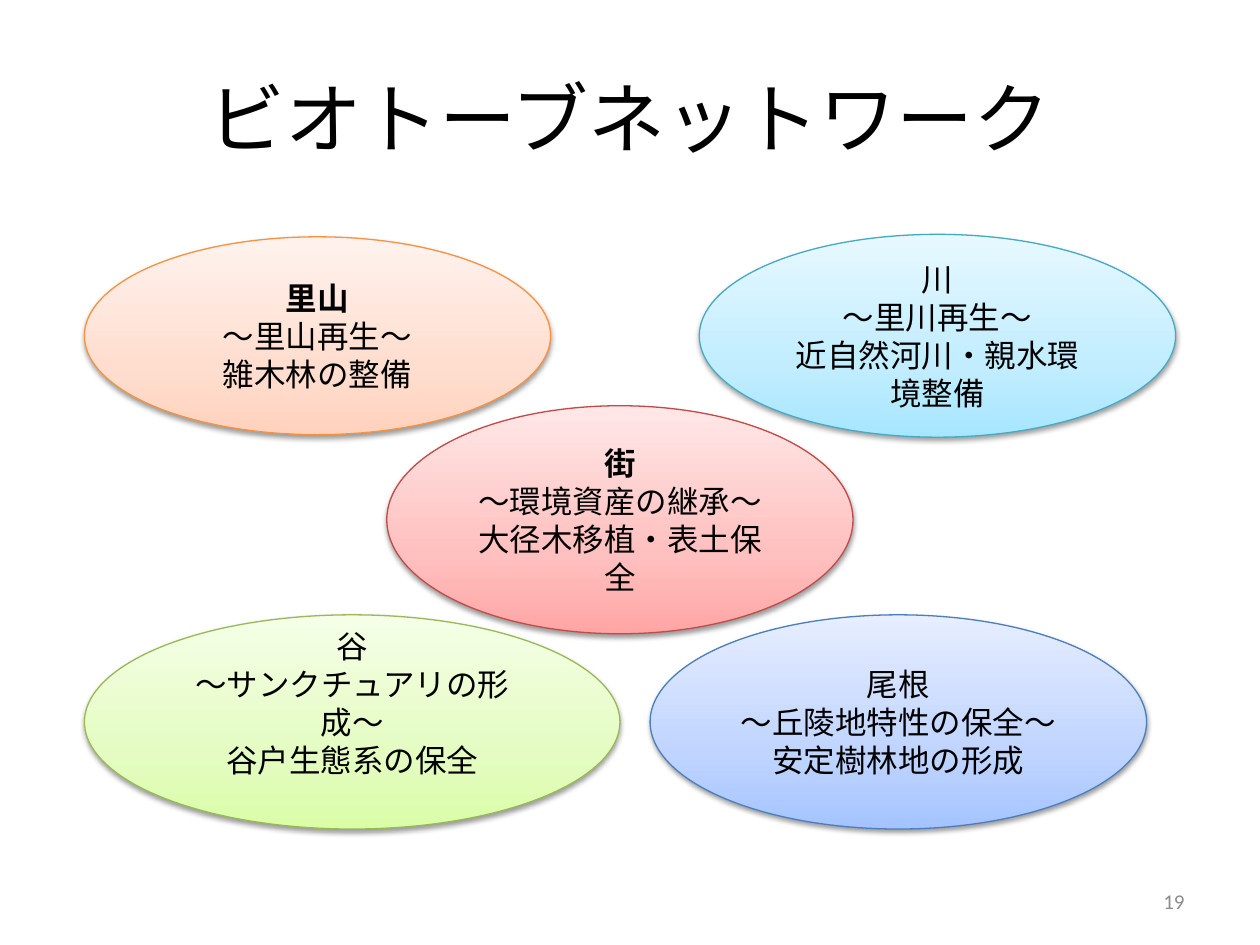
"""Build the biotope network slide with its five habitat ellipses."""
from lxml.etree import SubElement
from pptx import Presentation
from pptx.dml.color import RGBColor
from pptx.enum.shapes import MSO_SHAPE
from pptx.enum.text import MSO_ANCHOR, PP_ALIGN
from pptx.oxml.ns import qn
from pptx.util import Inches, Pt

BLACK = RGBColor(0x00, 0x00, 0x00)
GRAY = RGBColor(0x8C, 0x8C, 0x8C)
ORANGE = RGBColor(0xF6, 0x92, 0x40)
TEAL = RGBColor(0x46, 0xAA, 0xC5)
GREEN = RGBColor(0x98, 0xB9, 0x55)
BLUE = RGBColor(0x4B, 0x7E, 0xBC)
RED = RGBColor(0xBF, 0x4C, 0x48)
ORANGE_FADE = RGBColor(0xFF, 0xD2, 0xBD), RGBColor(0xFF, 0xDE, 0xD0), RGBColor(0xFF, 0xF2, 0xED)
TEAL_FADE = RGBColor(0xA7, 0xE6, 0xFF), RGBColor(0xC1, 0xED, 0xFF), RGBColor(0xE7, 0xF8, 0xFF)
GREEN_FADE = RGBColor(0xDA, 0xFD, 0xA7), RGBColor(0xE4, 0xFC, 0xC2), RGBColor(0xF5, 0xFF, 0xE7)
BLUE_FADE = RGBColor(0xA4, 0xC4, 0xFF), RGBColor(0xBF, 0xD4, 0xFF), RGBColor(0xE6, 0xEE, 0xFF)
RED_FADE = RGBColor(0xFF, 0xA6, 0xA5), RGBColor(0xFF, 0xC0, 0xBF), RGBColor(0xFF, 0xE7, 0xE7)
LATIN, JAPANESE = "Calibri", "Noto Sans CJK JP"


def add_node(parent, tag, **attributes):
    return SubElement(parent, qn(tag), attributes)


def write_lines(frame, lines, size, align, color=BLACK, heading_font=LATIN, bold_heading=False):
    frame.word_wrap = True
    frame.vertical_anchor = MSO_ANCHOR.MIDDLE
    for index, line in enumerate(lines):
        paragraph = frame.paragraphs[0] if index == 0 else frame.add_paragraph()
        paragraph.text = line
        paragraph.alignment = align
        paragraph.font.size = Pt(size)
        paragraph.font.bold = bold_heading and index == 0
        paragraph.font.color.rgb = color
        paragraph.font.name = heading_font if index == 0 else LATIN
        add_node(paragraph._p.pPr.find(qn("a:defRPr")), "a:ea", typeface=JAPANESE)


deck = Presentation()
deck.slide_width, deck.slide_height = Inches(10), Inches(7.5)
slide = deck.slides.add_slide(deck.slide_layouts[6])

margin = deck.slide_width * 0.05
title = slide.shapes.add_textbox(
    int(margin), int(deck.slide_height * 0.04), int(deck.slide_width - 2 * margin), Inches(1.25))
write_lines(title.text_frame, ["ビオトーブネットワーク"], 44, PP_ALIGN.CENTER)

left_column, lower_row, lower_height = 0.67, 4.88, 1.7
habitats = [
    (left_column, 1.88, 3.7, 1.57, ORANGE, ORANGE_FADE, True,
     ["里山", "～里山再生～", "雑木林の整備"]),
    (5.55, 1.86, 3.78, 1.61, TEAL, TEAL_FADE, False,
     ["川", "～里川再生～", "近自然河川・親水環境整備"]),
    (left_column, lower_row, 4.25, lower_height, GREEN, GREEN_FADE, False,
     ["谷", "～サンクチュアリの形成～", "谷戸生態系の保全"]),
    (5.16, lower_row, 3.94, lower_height, BLUE, BLUE_FADE, False,
     ["尾根", "～丘陵地特性の保全～", "安定樹林地の形成"]),
    (3.07, 3.22, 3.7, 1.81, RED, RED_FADE, True,
     ["街", "～環境資産の継承～", "大径木移植・表土保全"]),
]
for left, top, width, height, outline, fade, bold, lines in habitats:
    habitat = slide.shapes.add_shape(
        MSO_SHAPE.OVAL, Inches(left), Inches(top), Inches(width), Inches(height))
    habitat.line.color.rgb = outline
    habitat.line.width = Pt(0.75)

    habitat.fill.gradient()
    gradient = habitat._element.spPr.find(qn("a:gradFill"))
    for child in list(gradient):
        gradient.remove(child)
    stops = add_node(gradient, "a:gsLst")
    for position, color in zip((0, 35, 100), fade):
        stop = add_node(stops, "a:gs", pos=str(position * 1000))
        add_node(stop, "a:srgbClr", val=str(color))
    add_node(gradient, "a:lin", ang=str(270 * 60000), scaled="0")

    habitat.shadow.inherit = False
    effects = habitat._element.spPr.find(qn("a:effectLst"))
    shadow = add_node(effects, "a:outerShdw", blurRad=str(Pt(3.1)), dist=str(Pt(1.6)),
                      dir=str(90 * 60000), rotWithShape="0")
    shade = add_node(shadow, "a:srgbClr", val=str(BLACK))
    add_node(shade, "a:alpha", val="38000")

    write_lines(habitat.text_frame, lines, 18, PP_ALIGN.CENTER,
                heading_font=JAPANESE, bold_heading=bold)
    if outline == GREEN:
        habitat.text_frame.margin_bottom = Inches(0.35)

number_width = Inches(2.33)
page_number = slide.shapes.add_textbox(
    int(deck.slide_width - margin - number_width), Inches(6.95), number_width, Inches(0.4))
write_lines(page_number.text_frame, ["19"], 12, PP_ALIGN.RIGHT, GRAY)

deck.save("out.pptx")
